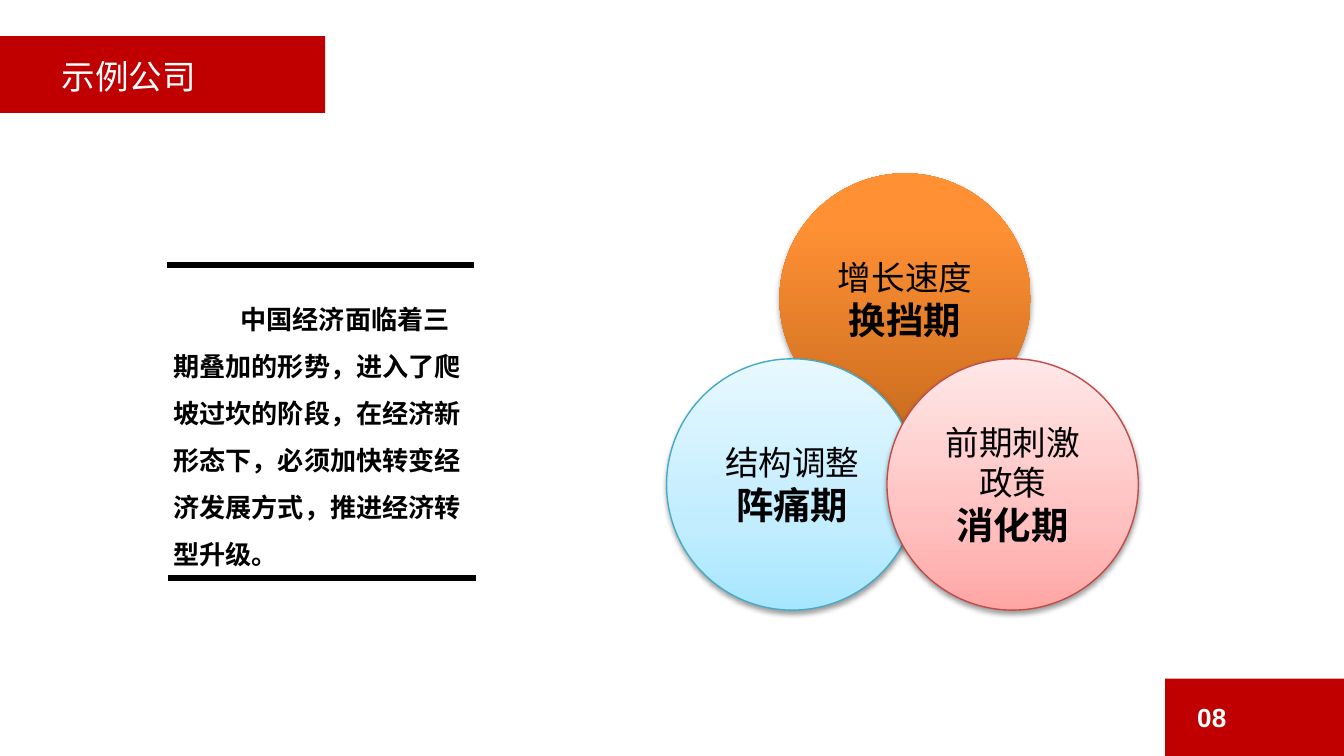
from lxml import etree
from pptx import Presentation
from pptx.dml.color import RGBColor
from pptx.enum.shapes import MSO_CONNECTOR, MSO_SHAPE
from pptx.enum.text import MSO_ANCHOR, PP_ALIGN
from pptx.oxml.ns import qn
from pptx.util import Inches, Pt

RECT, OVAL = MSO_SHAPE.RECTANGLE, MSO_SHAPE.OVAL
LINE = MSO_CONNECTOR.STRAIGHT
MIDDLE, CENTER = MSO_ANCHOR.MIDDLE, PP_ALIGN.CENTER

THEME = {
    "font": "Arial", "red": "C00000", "white": "FFFFFF", "black": "000000",
    "body": 14, "title": 18, "strong": 20,
    "orange": [(0, "CC6E20"), (80, "FF9034"), (100, "FF9136")],
    "blue": [(0, "A7E6FF"), (35, "C1EDFF"), (100, "E7F8FF")],
    "pink": [(0, "FFA6A5"), (35, "FFC0BF"), (100, "FFE7E7")],
    "teal": "46AAC5", "rose": "BF4C48",
}


def style(para, size, color, bold=False):
    for run in para.runs:
        font = run.font
        font.name, font.size, font.bold = THEME["font"], Pt(size), bold
        font.color.rgb = RGBColor.from_string(THEME[color])


def add_node(parent, tag, **attrs):
    return etree.SubElement(parent, qn(tag), {k: str(v) for k, v in attrs.items()})


# Widescreen slide, 16:9
prs = Presentation()
prs.slide_width = Inches(10)
prs.slide_height = Inches(10 * 9 / 16)
slide = prs.slides.add_slide(prs.slide_layouts[6])
shapes = slide.shapes

# Red blocks for page number and title
for box in [(8.67, 5.05, 1.33, 0.59), (0, 0.27, 2.42, 0.57)]:
    block = shapes.add_shape(RECT, *map(Inches, box))
    block.shadow.inherit = False
    block.fill.solid()
    block.fill.fore_color.rgb = RGBColor.from_string(THEME["red"])
    block.line.fill.background()

# Rules above and below the body text
for left, top in [(1.24, 1.97), (1.25, 4.3)]:
    rule = shapes.add_connector(
        LINE, Inches(left), Inches(top), Inches(left + 2.29), Inches(top))
    rule.line.width = Pt(3)
    rule.line.color.rgb = RGBColor.from_string(THEME["black"])
    add_node(rule._element.spPr, "a:effectLst")

# Page number, title and body text
body = "中国经济面临着三期叠加的形势，进入了爬坡过坎的阶段，在经济新形态下，必须加快转变经济发展方式，推进经济转型升级。"
texts = [
    ("08", (8.81, 5.17, 0.5, 0.33), "body", "white", True),
    ("示例公司", (0.36, 0.37, 2.68, 0.42), "title", "white", False),
    (body, (1.19, 2.09, 2.39, 2.18), "body", "black", True),
]
for text, box, size, color, bold in texts:
    frame = shapes.add_textbox(*map(Inches, box)).text_frame
    frame.word_wrap = True
    frame.text = text
    para = frame.paragraphs[0]
    style(para, THEME[size], color, bold)
    if text == body:
        para.line_spacing = 1.5
        para._p.get_or_add_pPr().set("indent", str(Inches(0.5)))

# Three overlapping circles
circles = [
    (5.8, 1.29, "orange", None, "增长速度", "换挡期", 35, 1.8),
    (4.96, 2.67, "blue", "teal", "结构调整", "阵痛期", 38, 1.6),
    (6.6, 2.67, "pink", "rose", "前期刺激政策", "消化期", 38, 1.6),
]
for left, top, grad, edge, name, phase, alpha, dist in circles:
    disc = shapes.add_shape(
        OVAL, Inches(left), Inches(top), Inches(1.87), Inches(1.87))
    disc.fill.gradient()
    disc.fill.gradient_angle = 90
    stops = disc._element.spPr.find(qn("a:gradFill")).find(qn("a:gsLst"))
    for stop in list(stops):
        stops.remove(stop)
    for pos, tone in THEME[grad]:
        stop = add_node(stops, "a:gs", pos=pos * 1000)
        add_node(stop, "a:srgbClr", val=tone)

    if edge:
        disc.line.color.rgb = RGBColor.from_string(THEME[edge])
        disc.line.width = Pt(0.75)
    else:
        disc.line.fill.background()

    # Soft shadow straight below
    disc.shadow.inherit = False
    effect = disc._element.spPr.find(qn("a:effectLst"))
    shade = add_node(effect, "a:outerShdw", blurRad=Pt(3.1), dist=Pt(dist),
                     dir=90 * 60000, rotWithShape=0)
    tint = add_node(shade, "a:srgbClr", val=THEME["black"])
    add_node(tint, "a:alpha", val=alpha * 1000)

    # Label with the phase in bold
    frame = disc.text_frame
    frame.word_wrap = True
    frame.vertical_anchor = MIDDLE
    frame.text = f"{name}\n{phase}"
    for para, size, bold in zip(frame.paragraphs, ("title", "strong"), (False, True)):
        para.alignment = CENTER
        style(para, THEME[size], "black", bold)

prs.save("out.pptx")
